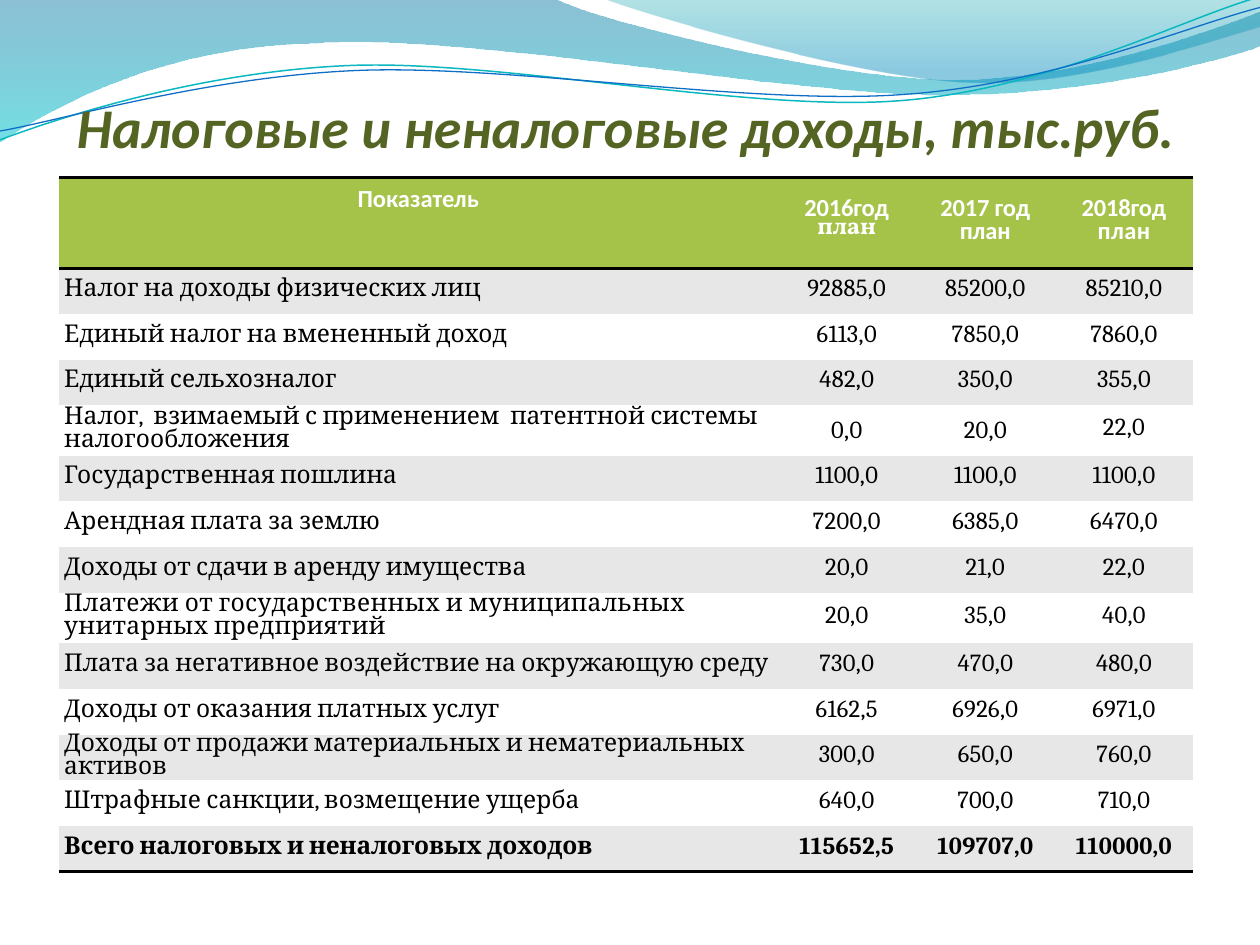
from collections import namedtuple
from dataclasses import dataclass
from math import cos, radians, sin

from lxml.etree import Element, SubElement as Sub
from pptx import Presentation
from pptx.dml.color import RGBColor as Rgb
from pptx.enum.text import MSO_ANCHOR as Anchor, PP_ALIGN as Align
from pptx.oxml.ns import qn
from pptx.util import Emu, Pt

Box = namedtuple("Box", "left top width height")
COLS, ROWS = 10, 7.5
CELL = 914400


@dataclass(frozen=True)
class Theme:
    """Colours, fonts and type sizes of the slide."""
    title: str = "546422"
    head: str = "A5C249"
    band: str = "E7E7E7"
    plain: str = "FFFFFF"
    ink: str = "000000"
    teal: str = "0AB8BF"
    blue: str = "0F6FC6"
    sans: str = "Calibri"
    serif: str = "Cambria"
    accent: str = "Vollkorn"
    big: int = 32
    small: int = 14
    lead: int = 13


THEME = Theme()
TILT = 357.3

FILLS = [
    ([(0, 0), (4.4, -0.01), (4.76, 0.17, 6.64, 0.63, 7.58, 0.63),
      (8.53, 0.63, 9.58, 0.26, 10, 0.09), (10.01, 0.36),
      (9.83, 0.44, 8.7, 0.76, 7.46, 0.75), (6.22, 0.75, 3.82, 0.28, 2.57, 0.34),
      (1.29, 0.36, 0.46, 0.83, -0.01, 1.13), (0, 0)],
     [(0, "0074A1", 45), (1, "00C6CF", 55)]),
    ([(4.79, -0.01), (5.09, 0.11, 6.82, 0.62, 7.69, 0.65),
      (8.56, 0.69, 9.61, 0.32, 10, 0.21), (10, 0), (4.79, -0.01)],
     [(0, "00A1A9", 30), (0.8, "008BBF", 45)]),
]
LINES = [
    ([(0, 1.11), (0.48, 0.93, 1.58, 0.57, 2.77, 0.52),
      (3.95, 0.47, 5.93, 0.89, 7.13, 0.8), (8.33, 0.71, 9.38, 0.15, 9.98, -0.02)],
     (4.99, 0.57), THEME.teal, 0.85),
    ([(0, 1.04), (0.47, 0.96, 1.64, 0.61, 2.83, 0.56),
      (4.03, 0.51, 5.97, 0.84, 7.17, 0.75), (8.36, 0.67, 9.41, 0.21, 10, 0.06)],
     (5, 0.59), THEME.blue, 0.75),
]

TITLE = "Налоговые и неналоговые доходы, тыс.руб."
HEAD = ["Показатель", "2016год\nплан", "2017 год\nплан", "2018год\nплан"]
DATA = [
    ("Налог на доходы физических лиц", "92885,0", "85200,0", "85210,0"),
    ("Единый налог на вмененный доход", "6113,0", "7850,0", "7860,0"),
    ("Единый сельхозналог", "482,0", "350,0", "355,0"),
    ("Налог,  взимаемый с применением  патентной системы налогообложения",
     "0,0", "20,0", "22,0"),
    ("Государственная пошлина", "1100,0", "1100,0", "1100,0"),
    ("Арендная плата за землю", "7200,0", "6385,0", "6470,0"),
    ("Доходы от сдачи в аренду имущества", "20,0", "21,0", "22,0"),
    ("Платежи от государственных и муниципальных унитарных предприятий",
     "20,0", "35,0", "40,0"),
    ("Плата за негативное воздействие на окружающую среду",
     "730,0", "470,0", "480,0"),
    ("Доходы от оказания платных услуг", "6162,5", "6926,0", "6971,0"),
    ("Доходы от продажи материальных и нематериальных активов",
     "300,0", "650,0", "760,0"),
    ("Штрафные санкции, возмещение ущерба", "640,0", "700,0", "710,0"),
    ("Всего налоговых и неналоговых доходов", "115652,5", "109707,0", "110000,0"),
]
WIDTHS = [5.7, 1.1, 1.1, 1.1]
HEIGHTS = {0: 0.72, 4: 0.4, 8: 0.4}
LOOSE = {(4, 1), (4, 2)}
GRIDLESS = "{2D5ABB26-0587-4C30-8999-92F81FD0307C}"


def span(count):
    """Turn a count of grid cells into a length."""
    return Emu(round(count * CELL))


def turn(point, mid, angle):
    """Turn a point clockwise about a middle."""
    x, y = point[0] - mid[0], point[1] - mid[1]
    a = radians(angle)
    return mid[0] + x * cos(a) - y * sin(a), mid[1] + x * sin(a) + y * cos(a)


def bend(shape, parts):
    """Join each three line steps of a curved part into one cubic curve."""
    steps = shape._element.iter(qn("a:lnTo"))
    nodes = iter(list(steps))
    for part in parts[1:]:
        group = [next(nodes) for _ in range(len(part) // 2)]
        if len(group) == 3:
            curve = Element(qn("a:cubicBezTo"))
            group[0].addprevious(curve)
            for node in group:
                curve.append(node[0])
                node.getparent().remove(node)


def draw_path(slide, box, parts, close, mid=(0, 0), angle=0):
    """Draw one outline of lines and curves from the corner of the box."""
    pairs = [part[i:i + 2] for part in parts for i in range(0, len(part), 2)]
    spots = [turn(pair, mid, -angle) for pair in pairs]
    points = [(span(box.left + x), span(box.top + y)) for x, y in spots]
    pen = slide.shapes.build_freeform(*points[0])
    pen.add_line_segments(points[1:], close=close)
    shape = pen.convert_to_shape()
    bend(shape, parts)
    shape.rotation = angle
    shape.shadow.inherit = False
    return shape


def add_waves(slide, box):
    """Draw the waves and thin curves in the top band."""
    for parts, stops in FILLS:
        shape = draw_path(slide, box, parts, True)
        shape.line.fill.background()
        shape.fill.gradient()
        shape.fill.gradient_angle = 270
        for stop, (place, tint, _) in zip(shape.fill.gradient_stops, stops):
            stop.position = place
            stop.color.rgb = Rgb.from_string(tint)
        for node, (_, _, alpha) in zip(shape._element.iter(qn("a:srgbClr")), stops):
            Sub(node, qn("a:alpha"), val=str(alpha * 1000))
    for parts, mid, tint, weight in LINES:
        shape = draw_path(slide, box, parts, False, mid, TILT)
        shape.fill.background()
        shape.line.color.rgb = Rgb.from_string(tint)
        shape.line.width = Pt(weight)


def set_font(para, name, size, tint, bold=False, italic=False, gap=0):
    """Set the type and letter spacing of a whole paragraph."""
    font = para.font
    font.name, font.size = name, Pt(size)
    font.bold, font.italic = bold, italic
    font.color.rgb = Rgb.from_string(tint)
    if gap:
        para._p.pPr.find(qn("a:defRPr")).set("spc", str(gap))


def add_title(slide, box):
    """Place the title above the waves."""
    title = slide.shapes.title
    title.left, title.top, title.width, title.height = map(span, box)
    slide.shapes._spTree.append(title._element)
    frame = title.text_frame
    frame.text = TITLE
    frame.word_wrap = True
    frame.vertical_anchor = Anchor.BOTTOM
    frame.margin_left = frame.margin_right = frame.margin_bottom = 0
    frame.margin_top = span(0.05)
    para = frame.paragraphs[0]
    para.alignment = Align.CENTER
    set_font(para, THEME.sans, THEME.big, THEME.title, True, True)


def add_rule(cell, side):
    """Draw a black rule on one side of a cell."""
    rule = Sub(cell._tc.get_or_add_tcPr(), qn("a:" + side), w=str(Pt(2)))
    Sub(Sub(rule, qn("a:solidFill")), qn("a:srgbClr"), val=THEME.ink)


def pick_gap(row, col, index):
    """Return the letter spacing of a paragraph in hundredths of a point."""
    if row == 0:
        return 0 if col == 0 else 20 if (col, index) == (3, 1) else -10
    if col or row == 8:
        return 20
    return -10 if row == len(DATA) else 0


def fill_cell(cell, row, col, text):
    """Write and format one cell by its row and column."""
    head, last = row == 0, row == len(DATA)
    for side in ("lnT", "lnB") if head else ("lnB",) if last else ():
        add_rule(cell, side)
    tint = THEME.head if head else THEME.band if row % 2 else THEME.plain
    cell.fill.solid()
    cell.fill.fore_color.rgb = Rgb.from_string(tint)
    cell.text = text
    corner = head and col == 0
    if not corner:
        cell.vertical_anchor = Anchor.MIDDLE
        cell.margin_left = cell.margin_right = span(0.01)
        cell.margin_top = cell.margin_bottom = 0
    for index, para in enumerate(cell.text_frame.paragraphs):
        para.alignment = Align.CENTER if head or col else Align.LEFT
        if not corner and (row, col) not in LOOSE:
            para.line_spacing = Pt(THEME.lead)
        if not head and col == 0:
            para._p.get_or_add_pPr().set("marL", str(span(0.03)))
        name = THEME.sans if head else THEME.serif
        if head and (col, index) == (1, 1):
            name = THEME.accent
        set_font(para, name, THEME.small, THEME.plain if head else THEME.ink,
                 head or last, gap=pick_gap(row, col, index))


def add_grid(slide, box):
    """Build the table of tax and other income."""
    rows = [HEAD, *DATA]
    frame = slide.shapes.add_table(len(rows), len(HEAD), *map(span, box))
    table = frame.table
    table.horz_banding = False
    table._tbl.tblPr.find(qn("a:tableStyleId")).text = GRIDLESS
    for col, width in zip(table.columns, WIDTHS):
        col.width = span(width)
    even = (box.height - sum(HEIGHTS.values())) / (len(rows) - len(HEIGHTS))
    for row, texts in enumerate(rows):
        table.rows[row].height = span(HEIGHTS.get(row, even))
        for col, text in enumerate(texts):
            fill_cell(table.cell(row, col), row, col, text)


def main():
    """Build and save the slide."""
    deck = Presentation()
    deck.slide_width, deck.slide_height = span(COLS), span(ROWS)
    slide = deck.slides.add_slide(deck.slide_layouts[5])
    add_waves(slide, Box(0, 0, COLS, 1.14))
    add_title(slide, Box(0.47, 0.55, 9, 0.72))
    add_grid(slide, Box(0.47, 1.41, 9, 5.51))
    deck.save("out.pptx")


if __name__ == "__main__":
    main()
